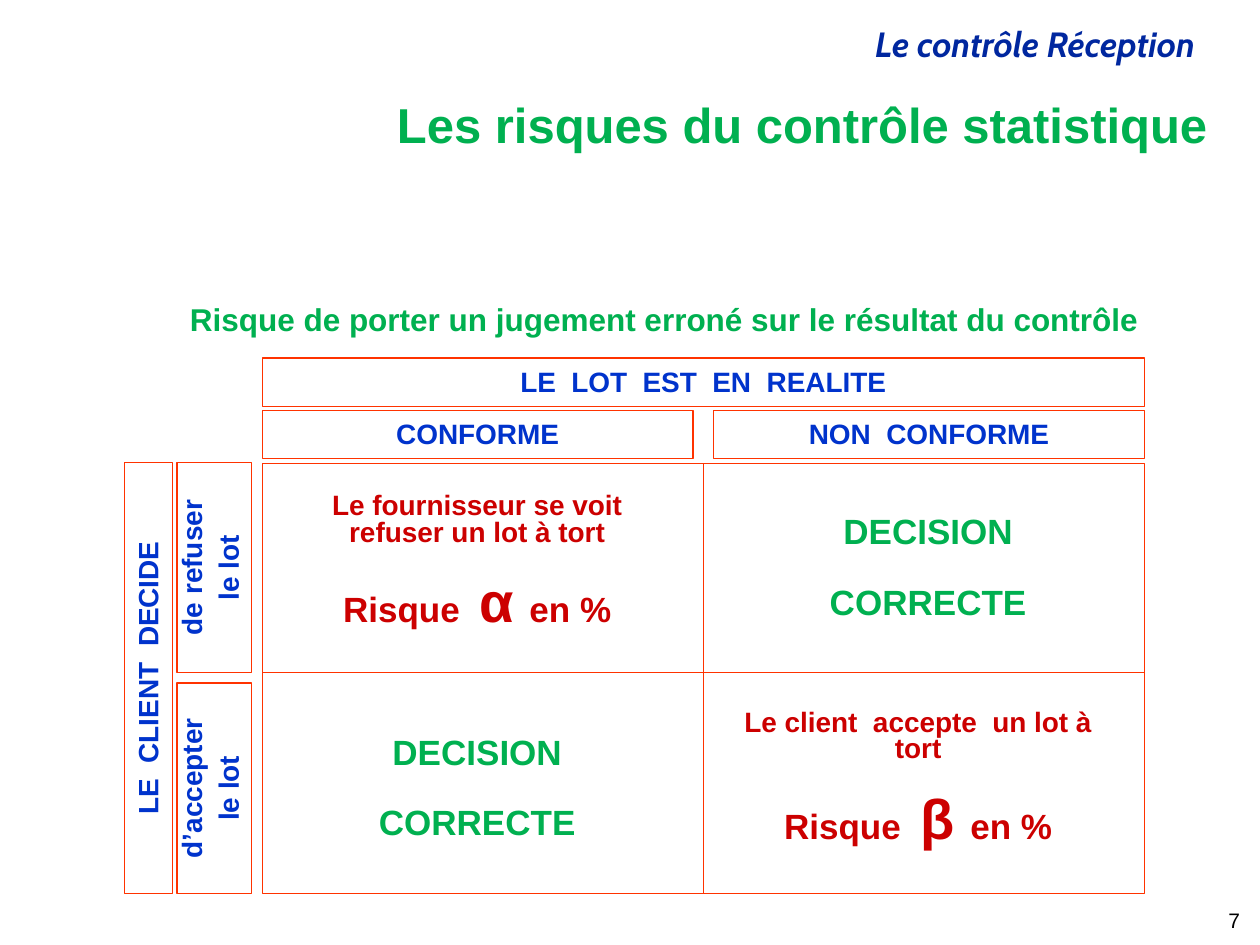
"""Build the slide on the risks of statistical acceptance control."""
from lxml.etree import SubElement
from pptx import Presentation
from pptx.dml.color import RGBColor
from pptx.enum.shapes import MSO_CONNECTOR, MSO_SHAPE
from pptx.enum.text import MSO_ANCHOR, MSO_AUTO_SIZE, PP_ALIGN
from pptx.oxml.ns import qn
from pptx.util import Cm, Pt

GREEN, BLUE, RED, ORANGE = "00B050", "0033CC", "CC0000", "FF3300"


def color(value):
    """Return the colour for a hex string."""
    return RGBColor.from_string(value)


def write(shape, paragraphs, ink, align=PP_ALIGN.CENTER, anchor=MSO_ANCHOR.TOP,
          font_name="Arial", italic=False, bold=True):
    """Fill a shape with (line spacing, space before, runs) paragraphs."""
    frame = shape.text_frame
    frame.word_wrap = True
    frame.auto_size = MSO_AUTO_SIZE.NONE
    frame.vertical_anchor = anchor
    for index, (spacing, before, runs) in enumerate(paragraphs):
        paragraph = frame.add_paragraph() if index else frame.paragraphs[0]
        paragraph.alignment = align
        paragraph.line_spacing = spacing
        paragraph.space_before = Pt(before)
        for text, size in runs:
            run = paragraph.add_run()
            run.text = text
            run.font.name = font_name
            run.font.size = Pt(size)
            run.font.bold = bold
            run.font.italic = italic
            run.font.color.rgb = color(ink)


presentation = Presentation()
presentation.slide_width = Cm(25.4)
presentation.slide_height = Cm(19.05)
slide = presentation.slides.add_slide(presentation.slide_layouts[5])
shapes = slide.shapes

title = shapes.title
title.left, title.top, title.width, title.height = Cm(4.47), Cm(1.65), Cm(20.12), Cm(1.85)
write(title, [(0.9, 0, [("Les risques du contrôle statistique", 28)])], GREEN,
      PP_ALIGN.RIGHT, MSO_ANCHOR.MIDDLE)

header = shapes.add_textbox(Cm(9.3), Cm(0.33), Cm(15.04), Cm(1.1))
write(header, [(1.0, 0, [("Le contrôle Réception", 20)])], "00279F",
      PP_ALIGN.RIGHT, font_name="Cabin", italic=True)

subtitle = shapes.add_textbox(Cm(3.58), Cm(5.77), Cm(20.32), Cm(1.1))
write(subtitle, [(1.2, 0, [("Risque de porter un jugement erroné sur le résultat du contrôle", 18)])],
      GREEN, PP_ALIGN.LEFT)

page_number = shapes.add_textbox(Cm(19.53), Cm(18.03), Cm(5.72), Cm(1.02))
write(page_number, [(1.0, 0, [("7", 12)])], "000000", PP_ALIGN.RIGHT, MSO_ANCHOR.MIDDLE, bold=False)

left, top, width, height = 5.29, 9.34, 17.78, 8.68
middle_x, middle_y = left + width / 2, 13.56
boxes = [
    (left, 7.22, width, 0.97, 0, ["LE  LOT  EST  EN  REALITE"]),
    (left, 8.28, 8.68, 0.97, 0, ["CONFORME"]),
    (left + width - 8.68, 8.28, 8.68, 0.97, 0, ["NON  CONFORME"]),
    (-1.35, 13.18, 8.68, 0.97, 270, ["LE  CLIENT  DECIDE"]),
    (2.2, 10.69, 4.24, 1.5, 270, ["de refuser", "le lot"]),
    (2.2, 15.14, 4.24, 1.5, 270, ["d’accepter", "le lot"]),
    (left, top, width, height, 0, []),
]
for x, y, box_width, box_height, rotation, lines in boxes:
    box = shapes.add_shape(MSO_SHAPE.RECTANGLE, Cm(x), Cm(y), Cm(box_width), Cm(box_height))
    box.rotation = rotation
    box.shadow.inherit = False
    box.fill.background()
    box.line.color.rgb = color(ORANGE)
    box.line.width = Pt(0.75)
    spacings = [0.7, 0.6] if len(lines) == 2 else [1.0]
    write(box, [(spacing, 9.2 * index, [(line, 16)])
                for index, (spacing, line) in enumerate(zip(spacings, lines))], BLUE)

for x1, y1, x2, y2 in [(middle_x, top, middle_x, top + height),
                       (left, middle_y, left + width, middle_y)]:
    divider = shapes.add_connector(MSO_CONNECTOR.STRAIGHT, Cm(x1), Cm(y1), Cm(x2), Cm(y2))
    divider.line.color.rgb = color(ORANGE)
    divider.line.width = Pt(0.75)
    SubElement(divider._element.spPr, qn("a:effectLst"))

for x, y in [(14.58, 9.98), (5.49, 14.43)]:
    decision = shapes.add_textbox(Cm(x), Cm(y), Cm(8.26), Cm(2.72))
    write(decision, [(1.2, 0, [("DECISION", 20)]), (1.2, 11.5, [("CORRECTE", 20)])], GREEN)

for x, y, consequence, symbol in [
    (5.49, 9.83, "Le fournisseur se voit refuser un lot à tort", "α "),
    (14.38, 14.2, "Le client  accepte  un lot à tort", "β "),
]:
    risk = shapes.add_textbox(Cm(x), Cm(y), Cm(8.26), Cm(3.1))
    write(risk, [(0.8, 0, [(consequence, 16)]),
                 (0.8, 18.4, [("Risque  ", 20), (symbol, 32), ("en %", 20)])], RED)

presentation.save("out.pptx")
